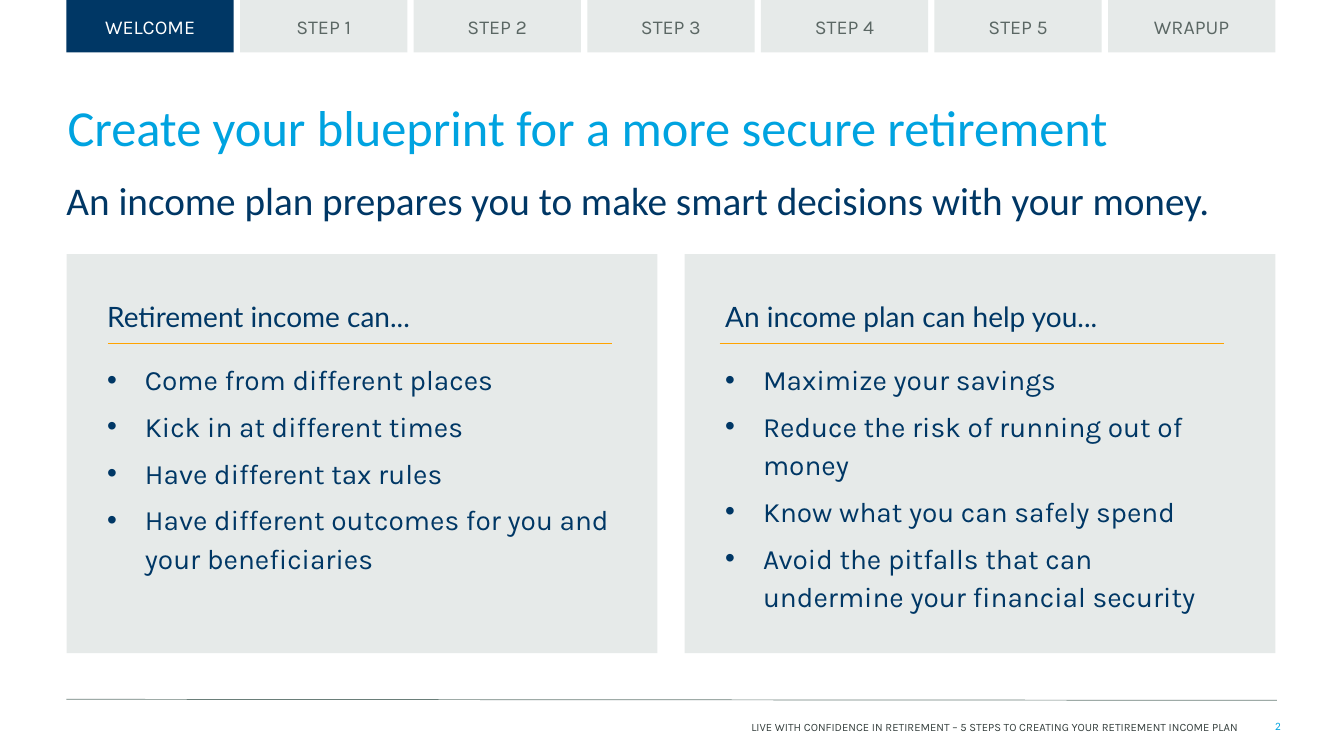
"""Build the welcome slide of a retirement income deck."""
from lxml.etree import SubElement
from pptx import Presentation
from pptx.dml.color import RGBColor
from pptx.enum.shapes import MSO_CONNECTOR, MSO_SHAPE
from pptx.enum.text import MSO_ANCHOR, MSO_AUTO_SIZE, PP_ALIGN
from pptx.oxml.ns import qn
from pptx.util import Pt

NAVY, SKY, MIST, GOLD = "003765", "00A3E0", "E6EAE9", "FFA300"
LEFT = 47.5
TABS = ["WELCOME", "STEP 1", "STEP 2", "STEP 3", "STEP 4", "STEP 5", "WRAPUP"]
PANELS = [
    ("Retirement income can...", 77, [
        "Come from different places",
        "Kick in at different times",
        "Have different tax rules",
        "Have different outcomes for you and your beneficiaries"]),
    ("An income plan can help you...", 514, [
        "Maximize your savings",
        "Reduce the risk of running out of money",
        "Know what you can safely spend",
        "Avoid the pitfalls that can undermine your financial security"]),
]


def color(code):
    return RGBColor.from_string(code)


def style(para, size, face, code, align=PP_ALIGN.LEFT):
    para.alignment = align
    for run in para.runs:
        run.font.size = Pt(size)
        run.font.name = face
        run.font.color.rgb = color(code)


def set_frame(frame, inset=0, anchor=MSO_ANCHOR.TOP):
    frame.word_wrap = True
    frame.auto_size = MSO_AUTO_SIZE.NONE
    frame.vertical_anchor = anchor
    frame.margin_left = frame.margin_right = Pt(inset)
    frame.margin_top = frame.margin_bottom = Pt(inset)


def add_text(slide, box, text, size, face, code,
             align=PP_ALIGN.LEFT, anchor=MSO_ANCHOR.TOP):
    frame = slide.shapes.add_textbox(*map(Pt, box)).text_frame
    set_frame(frame, anchor=anchor)
    frame.text = text
    style(frame.paragraphs[0], size, face, code, align)


def add_block(slide, box, code):
    block = slide.shapes.add_shape(MSO_SHAPE.RECTANGLE, *map(Pt, box))
    block.shadow.inherit = False
    block.fill.solid()
    block.fill.fore_color.rgb = color(code)
    block.line.fill.background()
    return block.text_frame


def add_rule(slide, ends, code, width):
    rule = slide.shapes.add_connector(MSO_CONNECTOR.STRAIGHT, *map(Pt, ends))
    rule.line.color.rgb = color(code)
    rule.line.width = Pt(width)
    SubElement(rule._element.spPr, qn("a:effectLst"))


def add_title(slide, text):
    title = slide.shapes.title
    title.left, title.top, title.width, title.height = map(
        Pt, (48.25, 82, 862.5, 37.5))
    frame = title.text_frame
    set_frame(frame)
    frame.text = text
    para = frame.paragraphs[0]
    para.line_spacing = Pt(30)
    style(para, 36, "Calibri", SKY)


def add_tab(slide, spot, label):
    on = spot == 0
    frame = add_block(slide, (LEFT + 124 * spot, 0, 119.5, 37.5),
                      NAVY if on else MIST)
    set_frame(frame, anchor=MSO_ANCHOR.MIDDLE)
    frame.text = label
    style(frame.paragraphs[0], 14, "Karla", "FFFFFF" if on else "5B6764",
          PP_ALIGN.CENTER)


def add_bullet(para):
    props = para._p.get_or_add_pPr()
    props.set("marL", str(Pt(27)))
    props.set("indent", str(-Pt(27)))
    SubElement(props, qn("a:buFont"), typeface="Arial")
    SubElement(props, qn("a:buChar"), char="•")


def add_panel(slide, spot, head, start, items):
    frame = add_block(slide, (LEFT + 441.5 * spot, 181.5, 422, 285), MIST)
    set_frame(frame, inset=29)
    frame.text = "\n".join([head, *items])
    first, *rest = frame.paragraphs
    first.line_spacing = 1.14
    first.space_after = Pt(15)
    style(first, 20, "Lato", NAVY)
    for para in rest:
        add_bullet(para)
        para.line_spacing = 1.14
        para.space_before = para.space_after = Pt(3)
        style(para, 20, "Karla", NAVY)
    add_rule(slide, (start, 245.5, start + 360, 245.5), GOLD, 1)


def add_footer(slide):
    add_rule(slide, (LEFT, 499.5, 912, 500.25), "6A7E79", 0.5)
    add_text(slide, (426, 507.5, 459, 16.5),
             "LIVE WITH CONFIDENCE IN RETIREMENT – 5 STEPS TO CREATING "
             "YOUR RETIREMENT INCOME PLAN",
             8, "Karla", "353F3D", PP_ALIGN.RIGHT, MSO_ANCHOR.BOTTOM)
    add_text(slide, (893, 512, 22, 11.5), "2", 8, "Calibri", SKY,
             PP_ALIGN.RIGHT, MSO_ANCHOR.BOTTOM)


def main():
    deck = Presentation()
    deck.slide_width, deck.slide_height = Pt(960), Pt(540)
    slide = deck.slides.add_slide(deck.slide_layouts[5])
    add_title(slide, "Create your blueprint for a more secure retirement")
    add_text(slide, (LEFT, 126, 863.5, 36),
             "An income plan prepares you to make smart decisions "
             "with your money.", 28, "Calibri", NAVY)
    for spot, label in enumerate(TABS):
        add_tab(slide, spot, label)
    for spot, panel in enumerate(PANELS):
        add_panel(slide, spot, *panel)
    add_footer(slide)
    deck.save("out.pptx")


if __name__ == "__main__":
    main()
